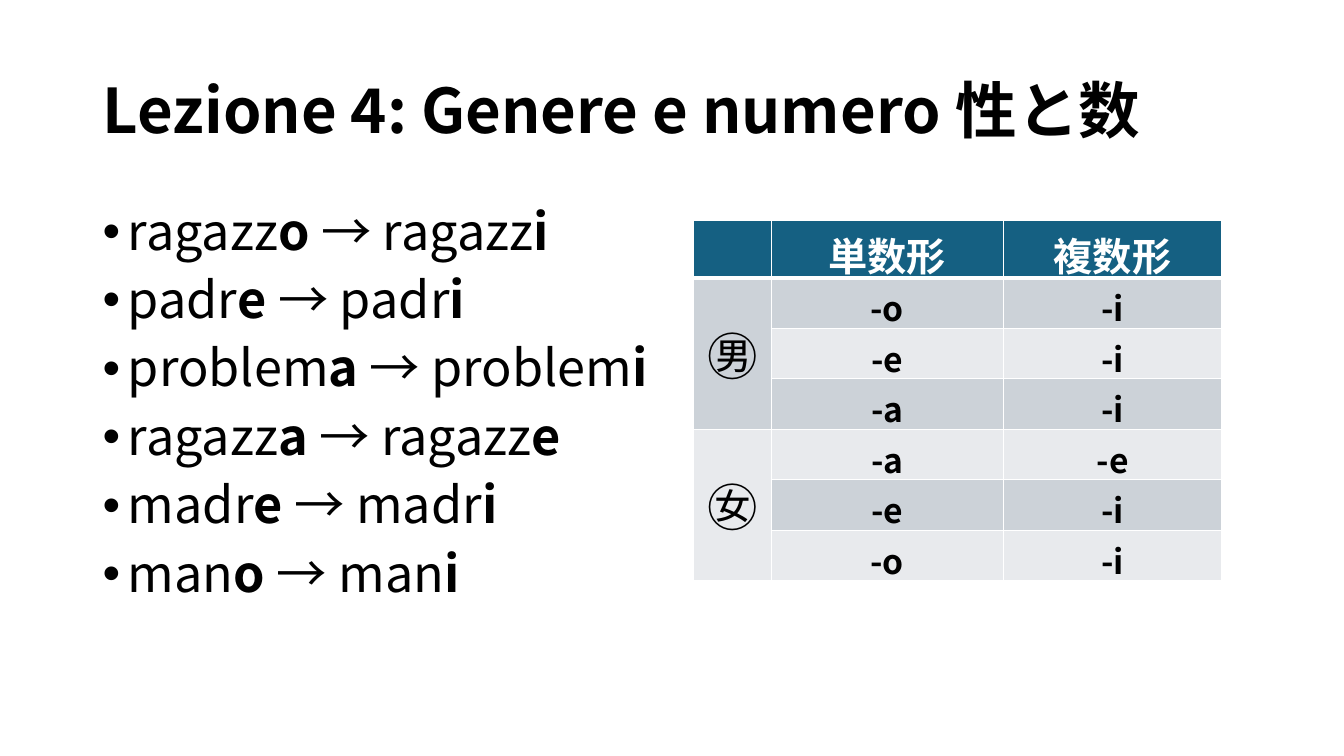
from lxml import etree
from pptx import Presentation
from pptx.dml.color import RGBColor
from pptx.enum import text
from pptx.oxml import ns
from pptx.util import Inches, Pt

FONT = "Noto Sans CJK JP"
COLORS = {
    "black": "000000",
    "white": "FFFFFF",
    "header": "156082",
    "dark_band": "CCD2D8",
    "light_band": "E8EAED",
}
TITLE = "Lezione 4: Genere e numero 性と数"
NOUNS = [
    ("ragazz", "o", "i"),
    ("padr", "e", "i"),
    ("problem", "a", "i"),
    ("ragazz", "a", "e"),
    ("madr", "e", "i"),
    ("man", "o", "i"),
]
GENDERS = ["㊚", "㊛"]
HEADINGS = ["", "単数形", "複数形"]
COLUMN_WIDTHS = [0.77, 2.3, 2.17]
ROW_HEIGHT = 0.41


def rgb(name):
    return RGBColor.from_string(COLORS[name])


def style_run(r, size, color="black", bold=False):
    r.font.size = Pt(size)
    r.font.bold = bold
    r.font.color.rgb = rgb(color)
    r.font.name = FONT
    ea = etree.SubElement(r._r.get_or_add_rPr(), ns.qn("a:ea"))
    ea.set("typeface", FONT)


def add_text_box(s, left, top, width, height, anchor):
    sp = s.shapes.add_textbox(Inches(left), Inches(top), Inches(width), Inches(height))
    tf = sp.text_frame
    tf.word_wrap = True
    tf.vertical_anchor = anchor
    return tf


def add_title(s):
    tf = add_text_box(s, 0.92, 0.4, 11.5, 1.45, text.MSO_ANCHOR.MIDDLE)
    tf.text = TITLE
    p = tf.paragraphs[0]
    p.line_spacing = 0.9
    style_run(p.runs[0], 44, bold=True)


def set_bullet(p):
    pPr = p._p.get_or_add_pPr()
    pPr.set("marL", str(Inches(0.25)))
    pPr.set("indent", str(-Inches(0.25)))
    font = etree.SubElement(pPr, ns.qn("a:buFont"))
    font.set("typeface", "Arial")
    bullet = etree.SubElement(pPr, ns.qn("a:buChar"))
    bullet.set("char", "•")


def add_noun_list(s):
    tf = add_text_box(s, 0.92, 2, 11.5, 4.76, text.MSO_ANCHOR.TOP)
    for i, (stem, singular, plural) in enumerate(NOUNS):
        p = tf.paragraphs[0] if i == 0 else tf.add_paragraph()
        p.line_spacing = 0.9
        p.space_before = Pt(10)
        set_bullet(p)
        parts = [stem, singular + " ", "→ " + stem, plural]
        for j, part in enumerate(parts):
            r = p.add_run()
            r.text = part
            style_run(r, 36, bold=j % 2 == 1)


def set_borders(cell, bottom=1):
    tcPr = cell._tc.get_or_add_tcPr()
    sides = [("a:lnL", 1), ("a:lnR", 1), ("a:lnT", 1), ("a:lnB", bottom)]
    for i, (side, width) in enumerate(sides):
        ln = etree.Element(ns.qn(side), w=str(Pt(width)))
        fill = etree.SubElement(ln, ns.qn("a:solidFill"))
        etree.SubElement(fill, ns.qn("a:srgbClr"), val=COLORS["white"])
        tcPr.insert(i, ln)


def fill_cell(cell, content, fill, size, color="black", bold=True, bottom=1):
    cell.fill.solid()
    cell.fill.fore_color.rgb = rgb(fill)
    cell.vertical_anchor = text.MSO_ANCHOR.MIDDLE
    set_borders(cell, bottom)
    if content:
        cell.text_frame.text = content
        p = cell.text_frame.paragraphs[0]
        p.alignment = text.PP_ALIGN.CENTER
        style_run(p.runs[0], size, color, bold)


def add_endings_table(s):
    frame = s.shapes.add_table(
        len(NOUNS) + 1, len(HEADINGS),
        Inches(6.88), Inches(2.19), Inches(sum(COLUMN_WIDTHS)), Inches(3.57))
    table = frame.table
    for column, width in zip(table.columns, COLUMN_WIDTHS):
        column.width = Inches(width)
    for row in table.rows:
        row.height = Inches(ROW_HEIGHT)
    frame.height = Inches(3.57)

    for col, heading in enumerate(HEADINGS):
        fill_cell(table.cell(0, col), heading, "header", 28, "white", bottom=3)
    for row, (_, *endings) in enumerate(NOUNS, 1):
        band = "dark_band" if row % 2 else "light_band"
        group, offset = divmod(row - 1, 3)
        gender = GENDERS[group] if offset == 0 else ""
        fill_cell(table.cell(row, 0), gender, band, 36, bold=False)
        for col, ending in enumerate(endings, 1):
            fill_cell(table.cell(row, col), "-" + ending, band, 24)
    for top in (1, 4):
        table.cell(top, 0).merge(table.cell(top + 2, 0))


def main():
    prs = Presentation()
    prs.slide_width = Inches(13.33)
    prs.slide_height = Inches(7.5)
    s = prs.slides.add_slide(prs.slide_layouts[6])
    add_title(s)
    add_endings_table(s)
    add_noun_list(s)
    prs.save("out.pptx")


if __name__ == "__main__":
    main()
